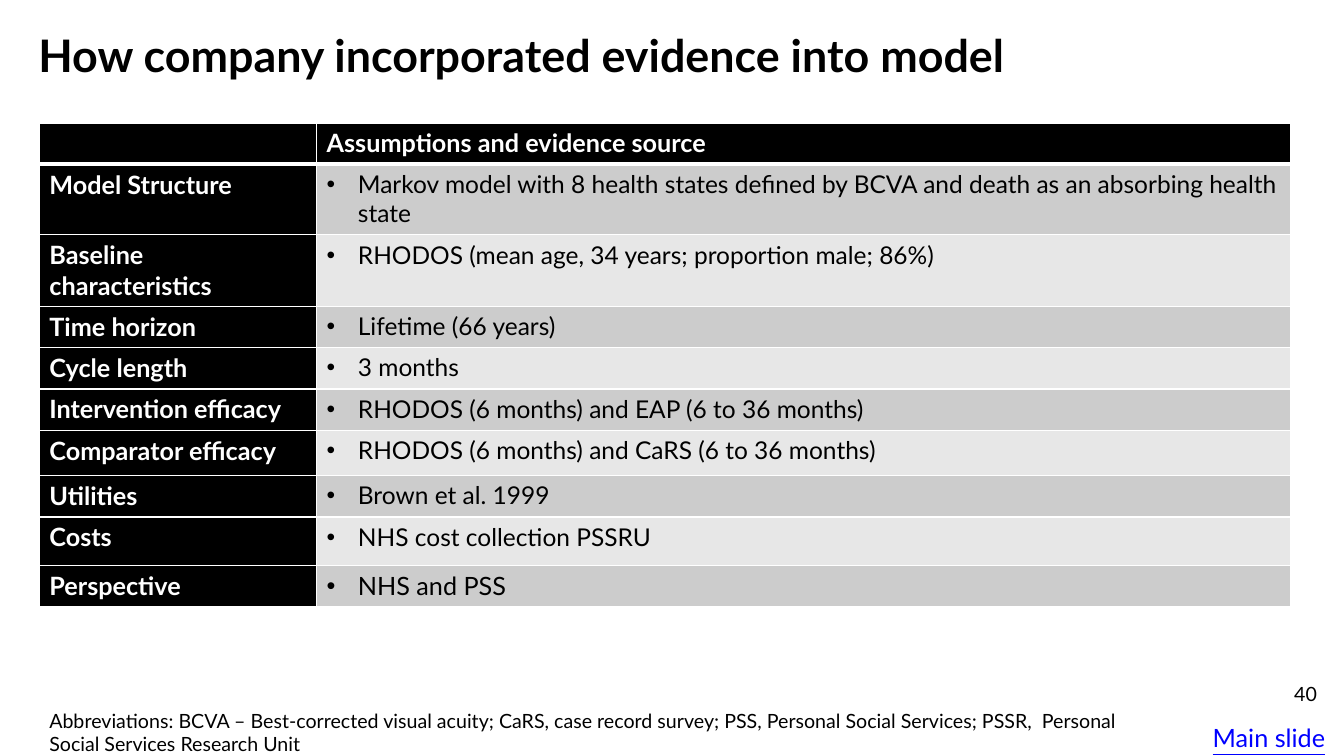
from dataclasses import dataclass

from lxml.etree import SubElement
from pptx import Presentation
from pptx.dml.color import RGBColor
from pptx.enum.text import MSO_ANCHOR, PP_ALIGN
from pptx.oxml.ns import qn
from pptx.util import Inches, Pt

FONT = "Lato"
COLORS = {
    "black": "000000",
    "white": "FFFFFF",
    "dark_band": "CCCCCC",
    "light_band": "E7E7E7",
    "link": "0000FF",
}


@dataclass
class ModelRow:
    topic: str
    evidence: str
    height: float
    size: float = 17.5


@dataclass
class Note:
    text: str
    left: float
    top: float
    width: float
    height: float
    size: float = 14
    color: str = "black"
    align: PP_ALIGN = PP_ALIGN.LEFT
    underline: bool = False


HEADER = ModelRow("", "Assumptions and evidence source", 0.41)
ROWS = [
    ModelRow("Model Structure", "Markov model with 8 health states defined by BCVA "
             "and death as an absorbing health state", 0.7),
    ModelRow("Baseline characteristics",
             "RHODOS (mean age, 34 years; proportion male; 86%)", 0.71),
    ModelRow("Time horizon", "Lifetime (66 years)", 0.41),
    ModelRow("Cycle length", "3 months", 0.41),
    ModelRow("Intervention efficacy", "RHODOS (6 months) and EAP (6 to 36 months)", 0.41),
    ModelRow("Comparator efficacy", "RHODOS (6 months) and CaRS (6 to 36 months)", 0.45),
    ModelRow("Utilities", "Brown et al. 1999", 0.41),
    ModelRow("Costs", "NHS cost collection PSSRU", 0.48),
    ModelRow("Perspective", "NHS and PSS", 0.41, size=18),
]
COLUMN_WIDTHS = (2.75, 9.66)
NOTES = [
    Note("40", 12.65, 6.72, 0.51, 0.4, align=PP_ALIGN.RIGHT),
    Note("Abbreviations: BCVA – Best-corrected visual acuity; CaRS, case record survey; "
         "PSS, Personal Social Services; PSSR,  Personal Social Services Research Unit",
         0.39, 6.98, 10.81, 0.57),
    Note("Main slide", 11.93, 7.12, 1.4, 0.4, size=18, color="link", underline=True),
]


def write_text(text_frame, text: str, *, size: float, color: str = "black",
               bold: bool = False, underline: bool = False,
               align: PP_ALIGN = PP_ALIGN.LEFT, bullet: bool = False) -> None:
    paragraph = text_frame.paragraphs[0]
    paragraph.alignment = align
    if bullet:
        properties = paragraph._p.get_or_add_pPr()
        properties.set("marL", str(Inches(0.31)))
        properties.set("indent", str(-Inches(0.31)))
        SubElement(properties, qn("a:buFont"), typeface="Arial")
        SubElement(properties, qn("a:buChar"), char="•")
    run = paragraph.add_run()
    run.text = text
    run.font.name = FONT
    run.font.size = Pt(size)
    run.font.bold = bold
    run.font.underline = underline
    run.font.color.rgb = RGBColor.from_string(COLORS[color])


def style_cell(cell, fill: str, top: float = 1, bottom: float = 1) -> None:
    # Borders come before the fill in the cell properties
    properties = cell._tc.get_or_add_tcPr()
    for side, width in {"L": 1, "R": 1, "T": top, "B": bottom}.items():
        line = SubElement(properties, qn(f"a:ln{side}"), w=str(Pt(width)))
        line_fill = SubElement(line, qn("a:solidFill"))
        SubElement(line_fill, qn("a:srgbClr"), val=COLORS["white"])
    cell.fill.solid()
    cell.fill.fore_color.rgb = RGBColor.from_string(COLORS[fill])


def add_title(slide, text: str) -> None:
    title = slide.shapes.title
    title.left, title.top = Inches(0.28), Inches(0.25)
    title.width, title.height = Inches(12.3), Inches(0.65)
    title.text_frame.word_wrap = True
    title.text_frame.vertical_anchor = MSO_ANCHOR.MIDDLE
    write_text(title.text_frame, text, size=32, bold=True)
    title.text_frame.paragraphs[0].line_spacing = 0.9


def add_model_table(slide) -> None:
    rows = [HEADER, *ROWS]
    table = slide.shapes.add_table(
        len(rows), len(COLUMN_WIDTHS), Inches(0.39), Inches(1.22),
        Inches(sum(COLUMN_WIDTHS)), Inches(sum(row.height for row in rows))).table
    for column, width in zip(table.columns, COLUMN_WIDTHS):
        column.width = Inches(width)
    for index, row in enumerate(rows):
        table.rows[index].height = Inches(row.height)
        topic, evidence = table.cell(index, 0), table.cell(index, 1)
        is_header = index == 0
        band = "black" if is_header else "dark_band" if index % 2 else "light_band"
        for cell, fill in ((topic, "black"), (evidence, band)):
            style_cell(cell, fill, top=3 if index == 1 else 1, bottom=3 if is_header else 1)
        if is_header:
            write_text(evidence.text_frame, row.evidence, size=18, color="white", bold=True)
        else:
            write_text(topic.text_frame, row.topic, size=18, color="white", bold=True)
            write_text(evidence.text_frame, row.evidence, size=row.size, bullet=True)


def add_note(slide, note: Note) -> None:
    box = slide.shapes.add_textbox(Inches(note.left), Inches(note.top),
                                   Inches(note.width), Inches(note.height))
    box.text_frame.word_wrap = True
    write_text(box.text_frame, note.text, size=note.size, color=note.color,
               align=note.align, underline=note.underline)


def main() -> None:
    presentation = Presentation()
    presentation.slide_width, presentation.slide_height = Inches(13.33), Inches(7.5)
    slide = presentation.slides.add_slide(presentation.slide_layouts[5])

    # Title and evidence table
    add_title(slide, "How company incorporated evidence into model")
    add_model_table(slide)

    # Slide number, abbreviations and link label
    for note in NOTES:
        add_note(slide, note)

    presentation.save("out.pptx")


if __name__ == "__main__":
    main()
